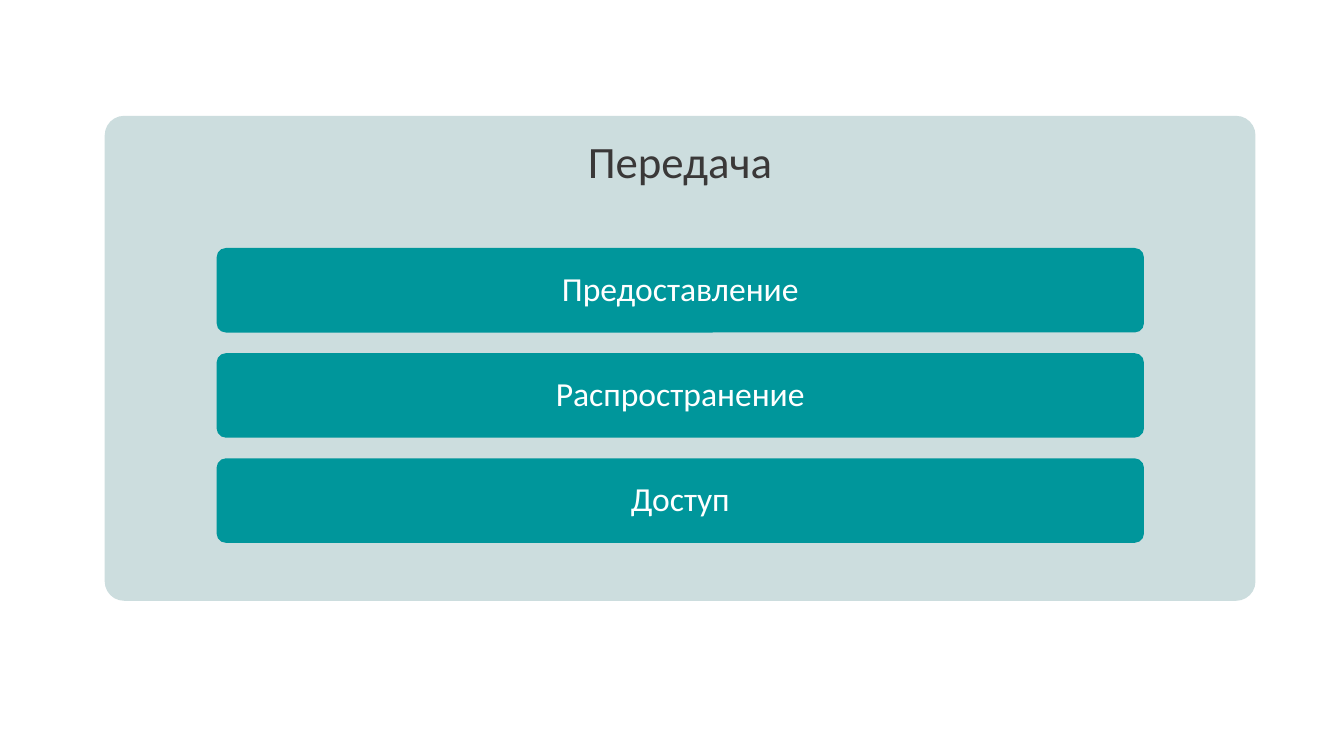
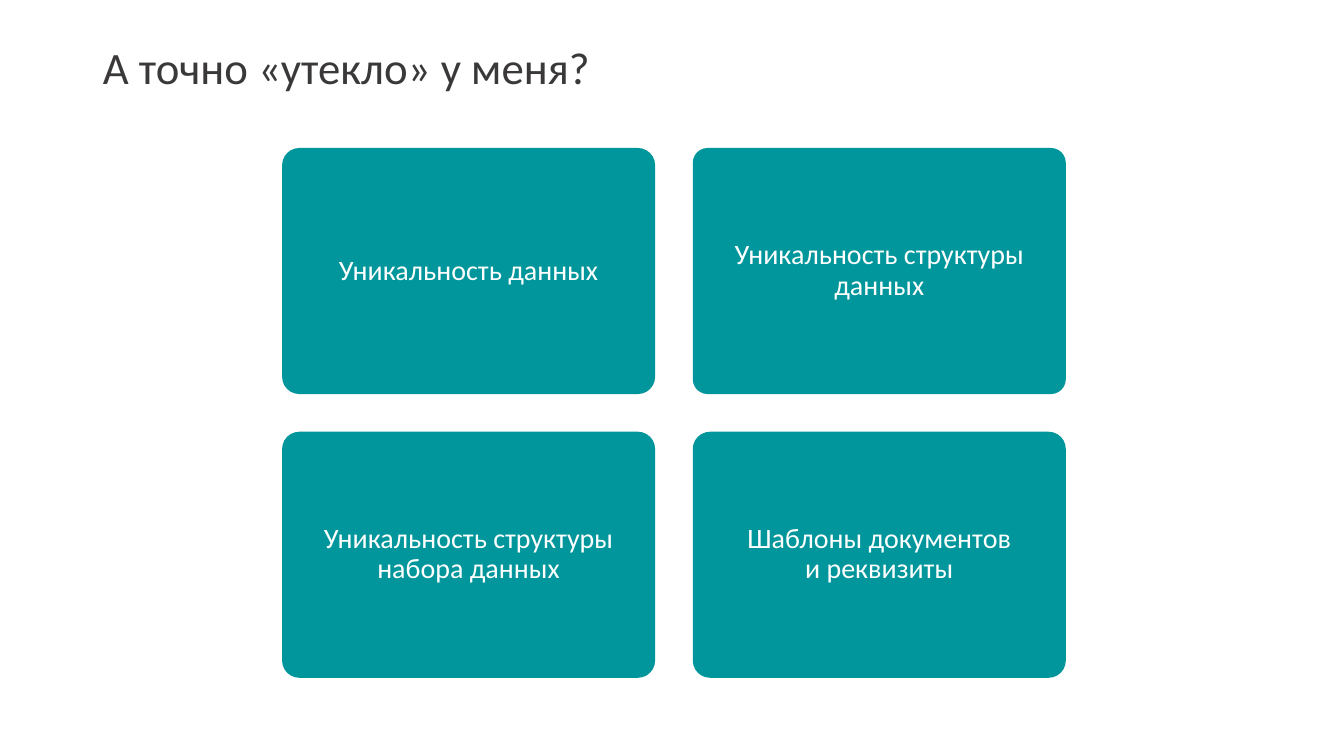
"""Build two slides on data transfer and on the signs of a data leak."""
from pptx import Presentation
from pptx.dml.color import RGBColor
from pptx.enum.shapes import MSO_SHAPE
from pptx.enum.text import MSO_ANCHOR, MSO_AUTO_SIZE, PP_ALIGN
from pptx.util import Cm, Pt

TEAL, PALE, DARK, WHITE = "00969B", "CCDDDE", "3A3838", "FFFFFF"
FONT = "Calibri"


def write(shape, text, size, color, align):
    frame = shape.text_frame
    frame.text = text
    frame.word_wrap = True
    frame.auto_size = MSO_AUTO_SIZE.NONE
    frame.vertical_anchor = MSO_ANCHOR.MIDDLE
    paragraph = frame.paragraphs[0]
    paragraph.alignment = align
    paragraph.line_spacing = 0.9
    for run in paragraph.runs:
        run.font.name = FONT
        run.font.size = Pt(size)
        run.font.color.rgb = RGBColor.from_string(color)


def add_block(slide, box, corner, fill, text, size, color, insets):
    block = slide.shapes.add_shape(MSO_SHAPE.ROUNDED_RECTANGLE, *map(Cm, box))
    block.adjustments[0] = corner
    block.shadow.inherit = False
    block.fill.solid()
    block.fill.fore_color.rgb = RGBColor.from_string(fill)
    block.line.fill.background()
    write(block, text, size, color, PP_ALIGN.CENTER)
    frame = block.text_frame
    frame.margin_left = frame.margin_right = Cm(insets[0])
    frame.margin_top, frame.margin_bottom = Cm(insets[1]), Cm(insets[2])


deck = Presentation()
deck.slide_width, deck.slide_height = Cm(33.87), Cm(19.05)

transfer = deck.slides.add_slide(deck.slide_layouts[6])
add_block(transfer, (2.64, 2.92, 29, 12.22), 0.04, PALE, "Передача", 32, DARK,
          (0.69, 0.69, 10.49))
bar_height, bar_gap = 2.13, 0.52
for row, form in enumerate(["Предоставление", "Распространение", "Доступ"]):
    top = 6.25 + row * (bar_height + bar_gap)
    add_block(transfer, (5.46, top, 23.37, bar_height), 0.11, TEAL, form, 24, WHITE,
              (0.46, 0.36, 0.36))

leak = deck.slides.add_slide(deck.slide_layouts[5])
title = leak.shapes.title
title.left, title.top, title.width, title.height = Cm(2.34), Cm(1.02), Cm(29.2), Cm(1.5)
write(title, "А точно «утекло» у меня?", 32, DARK, PP_ALIGN.LEFT)

signs = [
    ("Уникальность данных", 0.07),
    ("Уникальность структуры данных", 0.06),
    ("Уникальность структуры набора данных", 0.07),
    ("Шаблоны документов\vи реквизиты", 0.07),
]
card_width, card_height, card_gap = 9.4, 6.2, 0.95
for index, (sign, corner) in enumerate(signs):
    row, column = divmod(index, 2)
    left = 7.11 + column * (card_width + card_gap)
    top = 3.73 + row * (card_height + card_gap)
    add_block(leak, (left, top, card_width, card_height), corner, TEAL, sign, 20, WHITE,
              (0.43, 0.43, 0.43))

deck.save("out.pptx")
